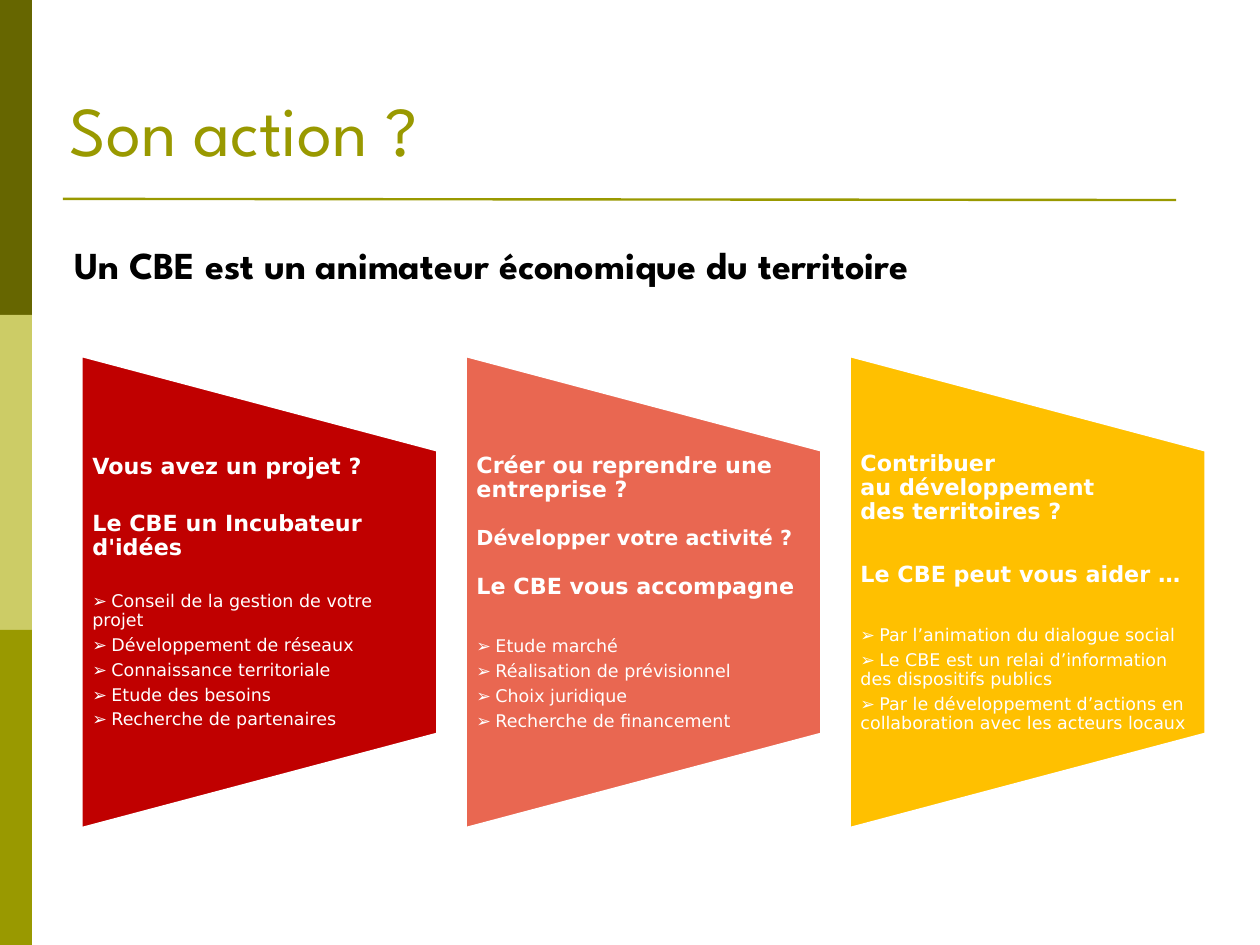
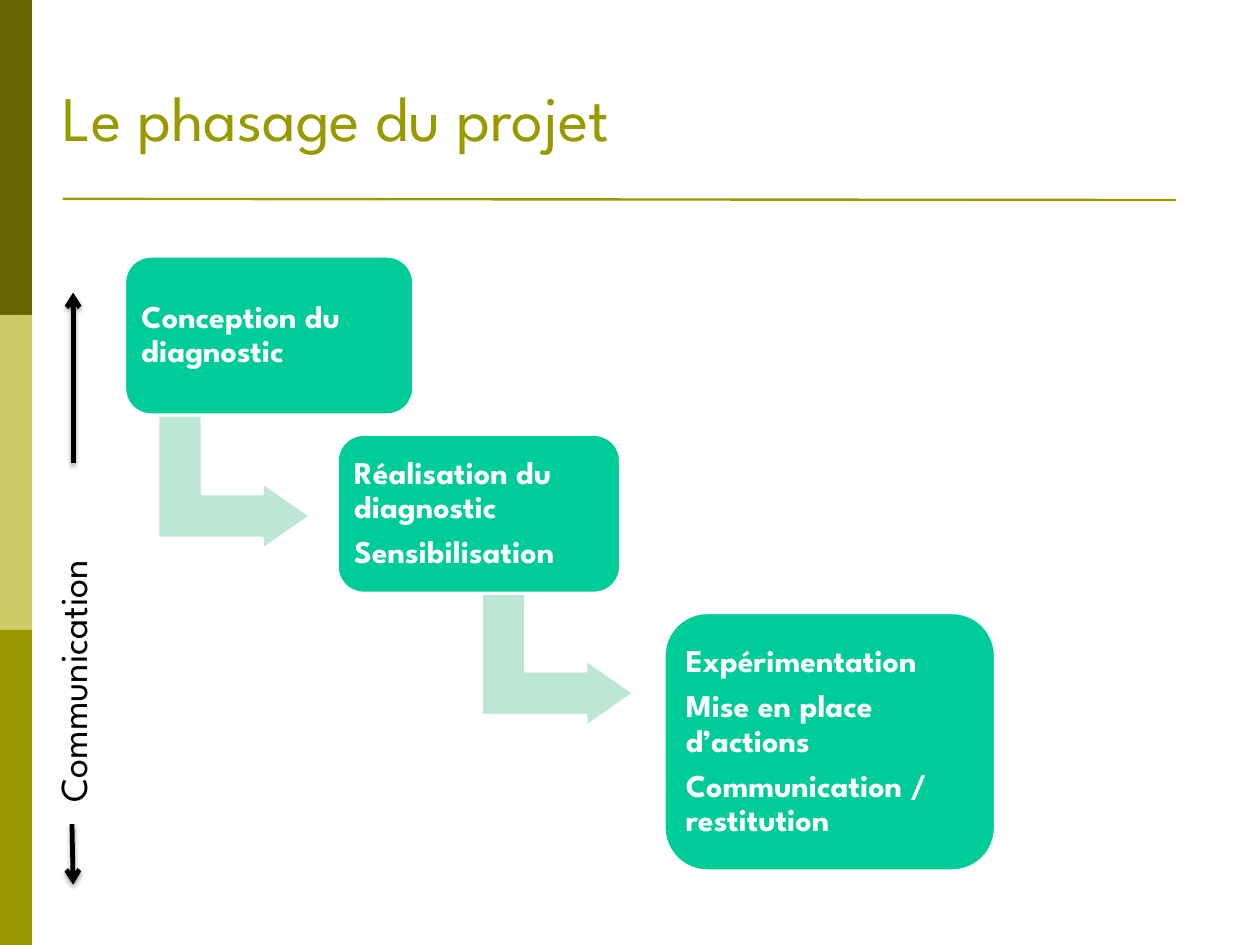
"""Build two slides on the action of a CBE and the phases of its project."""
from lxml.etree import SubElement
from pptx import Presentation
from pptx.dml.color import RGBColor
from pptx.enum.shapes import MSO_CONNECTOR, MSO_SHAPE
from pptx.enum.text import MSO_ANCHOR, PP_ALIGN
from pptx.oxml.ns import qn
from pptx.util import Inches, Pt

DARK_OLIVE = RGBColor(0x66, 0x66, 0x00)
LIGHT_OLIVE = RGBColor(0xCC, 0xCC, 0x66)
OLIVE = RGBColor(0x99, 0x99, 0x00)
RED = RGBColor(0xC0, 0x00, 0x00)
CORAL = RGBColor(0xE9, 0x67, 0x51)
AMBER = RGBColor(0xFF, 0xC0, 0x00)
GREEN = RGBColor(0x00, 0xCC, 0x99)
PALE_GREEN = RGBColor(0xBD, 0xE7, 0xD4)
WHITE = RGBColor(0xFF, 0xFF, 0xFF)
BLACK = RGBColor(0x00, 0x00, 0x00)
SPARTAN = "League Spartan"
DEJAVU = "DejaVu Sans"
AFTER_RATIO = 0.35
CM_PER_INCH = 2.54
SLIDE_WIDTH = 28 / CM_PER_INCH
SLIDE_HEIGHT = 21 / CM_PER_INCH


def add_block(slide, kind, box, fill, outline=True):
    """Add a filled preset shape, outlined in white unless told otherwise."""
    block = slide.shapes.add_shape(kind, *map(Inches, box))
    block.shadow.inherit = False
    block.fill.solid()
    block.fill.fore_color.rgb = fill
    if outline:
        block.line.color.rgb = WHITE
        block.line.width = Pt(2)
    else:
        block.line.fill.background()
    return block


def write(shape, paragraphs, color, insets=(0.1, 0.05), anchor=MSO_ANCHOR.TOP, spacing=1.0):
    """Write paragraphs given as (runs, size, bold, space after)."""
    frame = shape.text_frame
    frame.word_wrap = True
    frame.vertical_anchor = anchor
    frame.margin_left = frame.margin_right = Inches(insets[0])
    frame.margin_top = frame.margin_bottom = Inches(insets[1])
    for index, (runs, size, bold, after) in enumerate(paragraphs):
        paragraph = frame.add_paragraph() if index else frame.paragraphs[0]
        paragraph.alignment = PP_ALIGN.LEFT
        paragraph.line_spacing = spacing
        paragraph.space_after = Pt(after)
        for text, font in runs:
            for number, line in enumerate(text.split("\n")):
                if number:
                    paragraph.add_line_break()
                run = paragraph.add_run()
                run.text = line
                run.font.name = font
                run.font.size = Pt(size)
                run.font.bold = bold
                run.font.color.rgb = color


deck = Presentation()
deck.slide_width, deck.slide_height = Inches(SLIDE_WIDTH), Inches(SLIDE_HEIGHT)
band_height = SLIDE_HEIGHT / 3

titles = [
    ("Son action ?", 44, (0.5, 0.3, 8.17, 1.25), (0.11, 0.06), MSO_ANCHOR.BOTTOM),
    ("Le phasage du projet", 40, (0.55, 0.38, 9.92, 1.28), (0, 0), MSO_ANCHOR.MIDDLE),
]
for title, size, box, insets, anchor in titles:
    slide = deck.slides.add_slide(deck.slide_layouts[6])
    for row, color in enumerate((DARK_OLIVE, LIGHT_OLIVE, OLIVE)):
        add_block(slide, MSO_SHAPE.RECTANGLE, (0, row * band_height, 0.28, band_height), color, False)
    rule = slide.shapes.add_connector(
        MSO_CONNECTOR.STRAIGHT, Inches(0.55), Inches(1.74), Inches(10.29), Inches(1.75))
    rule.line.color.rgb = OLIVE
    rule.line.width = Pt(1.5)
    SubElement(rule._element.spPr, qn("a:effectLst"))
    heading = slide.shapes.add_textbox(*map(Inches, box))
    write(heading, [([(title, SPARTAN)], size, False, 0)], OLIVE, insets, anchor)

action, phasing = deck.slides

tagline = action.shapes.add_textbox(Inches(0.55), Inches(2.09), Inches(9.84), Inches(0.63))
write(tagline, [([("Un CBE est un animateur économique du territoire", SPARTAN)], 24, True, 0)],
      BLACK, spacing=0.95)

offers = [
    (RED,
     [("Vous avez un projet ?", 14, 11), ("Le CBE un Incubateur d'idées", 14, 11)],
     ["Conseil de la gestion de votre projet", "Développement de réseaux",
      "Connaissance territoriale", "Etude des besoins", "Recherche de partenaires"]),
    (CORAL,
     [("Créer ou reprendre une entreprise ?", 14, 8), ("Développer votre activité ?", 13, 8),
      ("Le CBE vous accompagne", 14, 14)],
     ["Etude marché", "Réalisation de prévisionnel", "Choix juridique",
      "Recherche de financement"]),
    (AMBER,
     [("Contribuer\nau développement\ndes territoires ?", 14, 14),
      ("Le CBE peut vous aider …", 14, 14)],
     ["Par l’animation du dialogue social",
      "Le CBE est un relai d’information des dispositifs publics",
      "Par le développement d’actions en collaboration avec les acteurs locaux"]),
]
for column, (color, questions, services) in enumerate(offers):
    shift = column * 3.36
    panel = add_block(action, MSO_SHAPE.FLOWCHART_MANUAL_OPERATION,
                      (0.2 + shift, 3.62, 4.14, 3.12), color)
    panel.rotation = 270
    paragraphs = [([(text, DEJAVU)], size, True, AFTER_RATIO * size + 1.4 * gap)
                  for text, size, gap in questions]
    paragraphs += [([("➢ ", SPARTAN), (service, DEJAVU)], 11, False, AFTER_RATIO * 11)
                   for service in services]
    offer = action.shapes.add_textbox(
        Inches(0.71 + shift), Inches(3.94), Inches(3.12), Inches(2.49))
    write(offer, paragraphs, WHITE, (0.1, 0), MSO_ANCHOR.MIDDLE, 0.9)

for left, top in ((1.46, 3.55), (4.29, 5.1)):
    step_arrow = add_block(phasing, MSO_SHAPE.BENT_UP_ARROW, (left, top, 1.18, 1.34), PALE_GREEN)
    step_arrow.rotation = 90
    for index, value in enumerate((0.33, 0.25, 0.36)):
        step_arrow.adjustments[index] = value

phases = [
    ((1.09, 2.24, 2.53, 1.39), ["Conception du diagnostic"]),
    ((2.95, 3.8, 2.48, 1.39), ["Réalisation du diagnostic", "Sensibilisation"]),
    ((5.81, 5.36, 2.9, 2.26),
     ["Expérimentation", "Mise en place d’actions", "Communication / restitution"]),
]
for box, tasks in phases:
    phase = add_block(phasing, MSO_SHAPE.ROUNDED_RECTANGLE, box, GREEN)
    phase.adjustments[0] = 1 / 6
    write(phase, [([(task, SPARTAN)], 20, True, AFTER_RATIO * 20) for task in tasks],
          WHITE, (0.08, 0.08), MSO_ANCHOR.MIDDLE, 0.9)

communication = phasing.shapes.add_textbox(Inches(-1.22), Inches(5.02), Inches(3.7), Inches(0.5))
communication.rotation = 270
write(communication, [([("Communication", SPARTAN)], 24, False, 0)], BLACK)

for ends in ((0.64, 4.05, 0.64, 2.56), (0.63, 7.21, 0.64, 7.74)):
    time_arrow = phasing.shapes.add_connector(MSO_CONNECTOR.STRAIGHT, *map(Inches, ends))
    time_arrow.line.color.rgb = BLACK
    time_arrow.line.width = Pt(3)
    SubElement(time_arrow.line._get_or_add_ln(), qn("a:tailEnd"), type="arrow")
    effects = SubElement(time_arrow._element.spPr, qn("a:effectLst"))
    shadow = SubElement(effects, qn("a:outerShdw"), blurRad=str(Pt(3.1)), dist=str(Pt(1.8)),
                        dir="5400000", rotWithShape="0")
    tint = SubElement(shadow, qn("a:srgbClr"), val=str(BLACK))
    SubElement(tint, qn("a:alpha"), val="35000")

deck.save("out.pptx")
